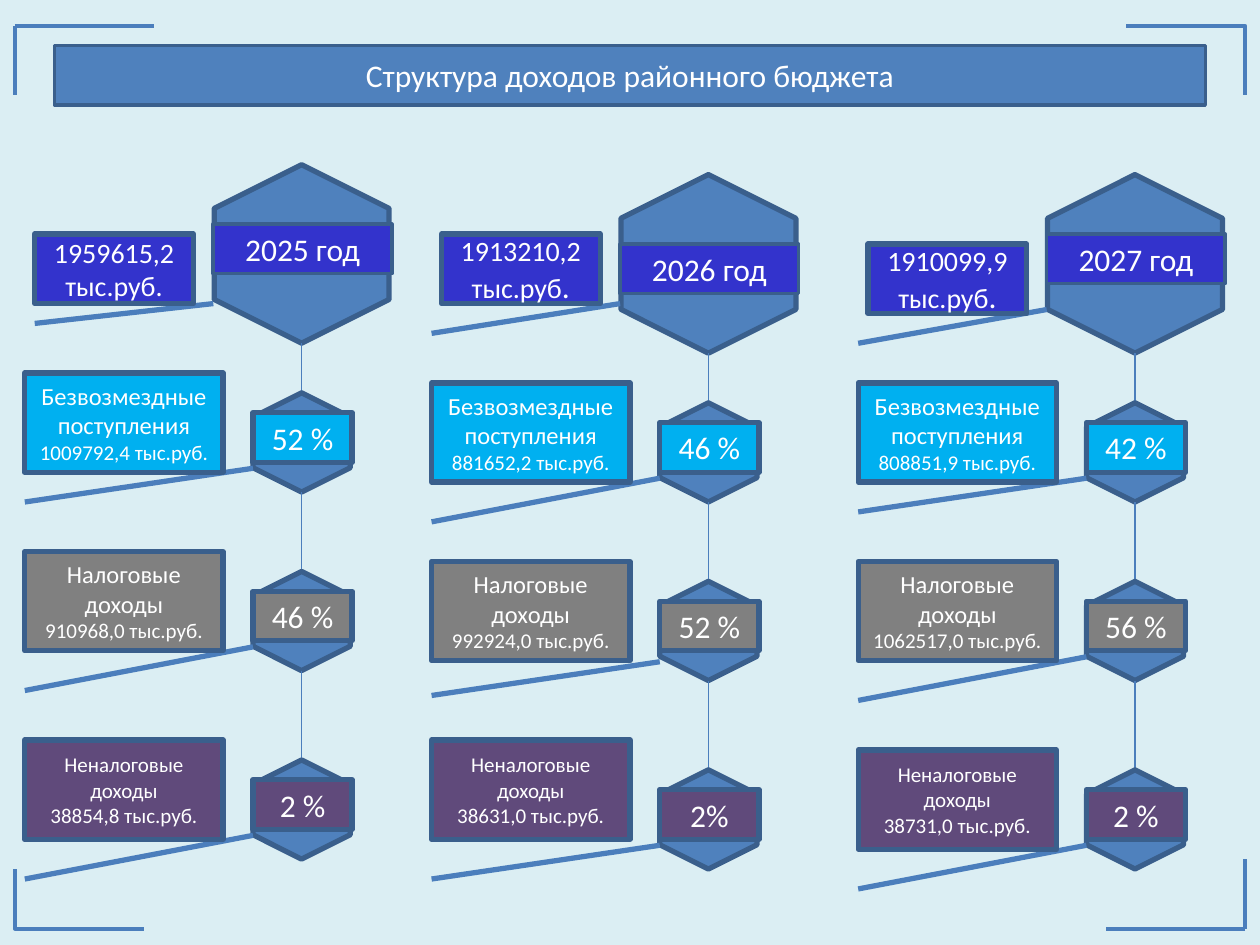
"""Build the slide on the revenue structure of a district budget."""
from dataclasses import dataclass

import lxml.etree
import pptx
import pptx.dml.color
import pptx.enum.shapes
import pptx.enum.text
import pptx.oxml.ns
import pptx.util

SHAPE = pptx.enum.shapes.MSO_SHAPE
CONNECTOR = pptx.enum.shapes.MSO_CONNECTOR
SLIDE_WIDTH = pptx.util.Inches(10)
SLIDE_HEIGHT = pptx.util.Inches(7.5)
CELL = SLIDE_WIDTH / 127


@dataclass(frozen=True)
class Theme:
    """Colours, font, type sizes and line widths of the slide."""
    background: str = "DBEEF3"
    body: str = "4F81BD"
    outline: str = "3A5F8C"
    rule: str = "4B7EBC"
    text: str = "FFFFFF"
    total: str = "3333CC"
    grants: str = "00B0F0"
    taxes: str = "808080"
    other: str = "604A7B"
    font: str = "Calibri"
    large: int = 18
    medium: int = 16
    label: int = 14
    small: int = 12
    heavy: float = 3
    frame: float = 2.25
    band: float = 2
    thin: float = 0.75


THEME = Theme()

SOURCES = (
    (("Безвозмездные", "поступления"), THEME.grants, THEME.label, 23),
    (("Налоговые", "доходы"), THEME.taxes, THEME.label, 41),
    (("Неналоговые", "доходы"), THEME.other, THEME.small, 60),
)

YEARS = (
    dict(box=(2.5, 16.6, 37, 72), year="2025 год", band_row=6, total_row=7,
         total=[("1959615,2 тыс.руб.", THEME.medium)],
         total_leader=((1, 16), (19, 14)),
         amounts=("1009792,4", "910968,0", "38854,8"),
         shares=("52 %", "46 %", "2 %"), label_rises=(2, 2, 2),
         leader_rows=((11, 7.6), (12, 7.6), (12, 7.6))),
    dict(box=(43.5, 17.6, 37, 72), year="2026 год", band_row=7, total_row=6,
         total=[("1913210,2 тыс.руб", THEME.medium), (".", THEME.large)],
         total_leader=((0, 16), (19, 13)),
         amounts=("881652,2", "992924,0", "38631,0"),
         shares=("46 %", "52 %", "2%"), label_rises=(2, 2, 3),
         leader_rows=((12, 7.6), (11.5, 8.1), (11, 7.6))),
    dict(box=(86.5, 17.6, 37, 72), year="2027 год", band_row=6, total_row=7,
         total=[("1910099,9 тыс.руб", THEME.medium), (".", THEME.large)],
         total_leader=((0, 17), (19, 13.6)),
         amounts=("808851,9", "1062517,0", "38731,0"),
         shares=("42 %", "56 %", "2 %"), label_rises=(2, 2, 2),
         leader_rows=((11, 7.6), (12, 7.6), (12, 7.6))),
)


def rgb(colour):
    """Return the colour object for a hex string."""
    return pptx.dml.color.RGBColor.from_string(colour)


def cells(*counts):
    """Convert grid cells to slide lengths."""
    return [pptx.util.Emu(round(count * CELL)) for count in counts]


def apply(target, formats):
    """Set every attribute named in a dict of format values."""
    for name, value in formats.items():
        setattr(target, name, value)


def add_block(slide, kind, box, fill, weight, paragraphs=()):
    """Add an outlined shape whose paragraphs are lists of (text, size) runs."""
    block = slide.shapes.add_shape(kind, *cells(*box))
    block.shadow.inherit = False
    block.fill.solid()
    block.fill.fore_color.rgb = rgb(fill)
    block.line.color.rgb = rgb(THEME.outline)
    block.line.width = pptx.util.Pt(weight)
    frame = block.text_frame
    apply(frame, dict(word_wrap=True,
                      vertical_anchor=pptx.enum.text.MSO_ANCHOR.MIDDLE))
    for index, runs in enumerate(paragraphs):
        paragraph = frame.add_paragraph() if index else frame.paragraphs[0]
        paragraph.alignment = pptx.enum.text.PP_ALIGN.CENTER
        for text, size in runs:
            run = paragraph.add_run()
            run.text = text
            apply(run.font, dict(name=THEME.font, size=pptx.util.Pt(size)))
            run.font.color.rgb = rgb(THEME.text)
    return block


def add_rule(slide, start, end, weight, bend=None):
    """Add a straight line, or an elbow bent at the given share of its width."""
    kind = CONNECTOR.STRAIGHT if bend is None else CONNECTOR.ELBOW
    rule = slide.shapes.add_connector(kind, *cells(*start, *end))
    rule.line.color.rgb = rgb(THEME.rule)
    rule.line.width = pptx.util.Pt(weight)
    qn = pptx.oxml.ns.qn
    lxml.etree.SubElement(rule._element.spPr, qn("a:effectLst"))
    if bend is not None:
        guides = rule._element.find(".//" + qn("a:avLst"))
        lxml.etree.SubElement(guides, qn("a:gd"), name="adj1",
                              fmla=f"val {round(bend * 100000)}")


def add_hexagon(slide, centre, top, size):
    """Add a hexagon standing on its point, with its visible top given."""
    depth = size * 0.98
    box = (centre - size / 2, top + (size - depth) / 2, size, depth)
    add_block(slide, SHAPE.HEXAGON, box, THEME.body, THEME.heavy).rotation = 90


def add_frame(slide, box):
    """Draw the four corner brackets of the box."""
    left, top, width, height = box
    right, bottom = left + width, top + height
    for corner, column_end, row_end in (
            ((left, top), left + 14, top + 7),
            ((right, bottom), right - 14, bottom - 7)):
        add_rule(slide, corner, (column_end, corner[1]), THEME.frame)
        add_rule(slide, corner, (corner[0], row_end), THEME.frame)
    add_rule(slide, (left, bottom - 6), (left + 13, bottom), THEME.frame, 0)
    add_rule(slide, (right - 12, top), (right, top + 7), THEME.frame, 1)


def add_title(slide, box):
    """Place the title bar."""
    title = [[("Структура доходов районного бюджета", THEME.large)]]
    add_block(slide, SHAPE.RECTANGLE, box, THEME.body, THEME.band, title)


def add_source(slide, box, source, amount, share, label_rise, leader_rows):
    """Place one revenue source: hexagon, leader, label and share."""
    left, top, width, height = box
    words, colour, size, _ = source
    start_row, end_row = leader_rows
    add_hexagon(slide, left + 27.9, top, height)
    add_rule(slide, (left, top + start_row), (left + 23, top + end_row),
             THEME.heavy)
    label = [[(word, size)] for word in words]
    label.append([(f"{amount} тыс.руб.", THEME.small)])
    add_block(slide, SHAPE.RECTANGLE, (left, top - label_rise, 20, height),
              colour, THEME.heavy, label)
    add_block(slide, SHAPE.RECTANGLE, (left + 23, top + 2, 10, 5),
              colour, THEME.heavy, [[(share, THEME.large)]])


def add_year(slide, box, year, band_row, total_row, total, total_leader,
             amounts, shares, label_rises, leader_rows):
    """Place the column of one year: its total and the chain of sources."""
    left, top, width, _ = box
    centre = left + 27.9
    add_hexagon(slide, centre, top, 18)
    add_rule(slide, *((left + x, top + y) for x, y in total_leader),
             THEME.heavy)
    add_block(slide, SHAPE.RECTANGLE, (left + 19, top + band_row, 18, 5),
              THEME.total, THEME.band, [[(year, THEME.large)]])
    add_block(slide, SHAPE.RECTANGLE, (left + 1, top + total_row, 16, 7),
              THEME.total, THEME.heavy, [total])
    chain_end = top + 18
    for source, *details in zip(SOURCES, amounts, shares, label_rises,
                                leader_rows):
        row = top + source[-1]
        add_rule(slide, (centre, chain_end), (centre, row), THEME.thin)
        add_source(slide, (left, row, width, 10), source, *details)
        chain_end = row + 10


def main():
    """Build and save the presentation."""
    deck = pptx.Presentation()
    apply(deck, dict(slide_width=SLIDE_WIDTH, slide_height=SLIDE_HEIGHT))
    slide = deck.slides.add_slide(deck.slide_layouts[6])
    slide.background.fill.solid()
    slide.background.fill.fore_color.rgb = rgb(THEME.background)
    add_title(slide, (5.5, 4.6, 116, 6))
    add_frame(slide, (1.5, 2.6, 124, 91))
    for year in YEARS:
        add_year(slide, **year)
    deck.save("out.pptx")


if __name__ == "__main__":
    main()
